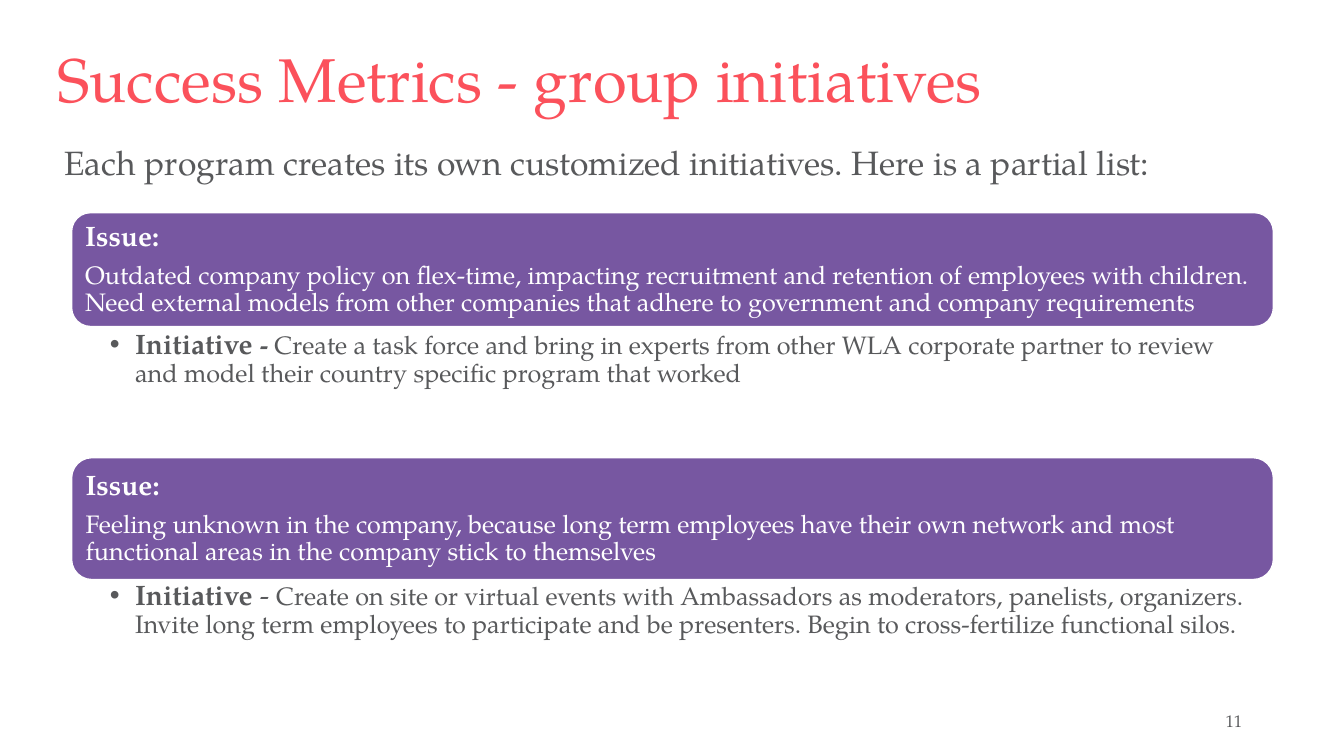
"""Build the slide on success metrics for group initiatives."""
from dataclasses import dataclass

from lxml.etree import SubElement
from pptx import Presentation
from pptx.dml.color import RGBColor
from pptx.enum.shapes import MSO_SHAPE as Shape
from pptx.enum.text import MSO_ANCHOR as Anchor, MSO_AUTO_SIZE as AutoSize, PP_ALIGN as Align
from pptx.oxml.ns import qn
from pptx.util import Inches, Pt


@dataclass(frozen=True)
class Theme:
    font: str = "TeX Gyre Pagella"
    coral: RGBColor = RGBColor(0xFB, 0x51, 0x5B)
    purple: RGBColor = RGBColor(0x77, 0x57, 0xA1)
    gray: RGBColor = RGBColor(0x58, 0x59, 0x5B)
    white: RGBColor = RGBColor(0xFF, 0xFF, 0xFF)
    title: int = 44
    intro: int = 24
    label: int = 20
    body: int = 18
    number: int = 12


@dataclass(frozen=True)
class Box:
    left: float
    top: float
    width: float
    height: float


@dataclass(frozen=True)
class Span:
    text: str
    size: int
    color: RGBColor
    bold: bool = False


@dataclass(frozen=True)
class Topic:
    issue: str
    initiative: tuple[Span, ...]
    issue_top: float
    issue_height: float
    initiative_top: float
    initiative_height: float


THEME = Theme()
LEFT, WIDTH = 0.71, 11.92
INITIATIVE = Span("Initiative ", THEME.label, THEME.gray, True)
TOPICS = (
    Topic(
        "Outdated company policy on flex-time, impacting recruitment and retention of employees "
        "with children. Need external models from other companies that adhere to government and "
        "company requirements",
        (
            INITIATIVE,
            Span("-", THEME.body, THEME.gray, True),
            Span(" Create a task force and bring in experts from other WLA corporate partner to "
                 "review and model their country specific program that worked",
                 THEME.body, THEME.gray),
        ),
        2.11, 1.13, 3.25, 1.28,
    ),
    Topic(
        "Feeling unknown in the company, because long term employees have their own network and "
        "most functional areas in the company stick to themselves",
        (
            INITIATIVE,
            Span("- ", THEME.label, THEME.gray),
            Span("Create on site or virtual events with Ambassadors as moderators, panelists, "
                 "organizers. Invite long term employees to participate and be presenters. Begin "
                 "to cross-fertilize functional silos.", THEME.body, THEME.gray),
        ),
        4.54, 1.21, 5.74, 0.62,
    ),
)


def place(shape, box: Box) -> None:
    """Move and size a shape."""
    shape.left, shape.top = Inches(box.left), Inches(box.top)
    shape.width, shape.height = Inches(box.width), Inches(box.height)


def set_frame(frame, anchor: Anchor, left: float = 0.1, top: float = 0.05, right: float = 0.1) -> None:
    """Set wrapping, anchor and insets of a text frame."""
    frame.word_wrap = True
    frame.auto_size = AutoSize.NONE
    frame.vertical_anchor = anchor
    frame.margin_left, frame.margin_right = Inches(left), Inches(right)
    frame.margin_top = frame.margin_bottom = Inches(top)


def write(para, spans: tuple[Span, ...], align: Align = Align.LEFT,
          line: float = 1.0, after: float = 0) -> None:
    """Fill a paragraph with formatted runs."""
    para.alignment, para.line_spacing = align, line
    para.space_before, para.space_after = Pt(0), Pt(after)
    for span in spans:
        run = para.add_run()
        run.text = span.text
        run.font.name, run.font.size = THEME.font, Pt(span.size)
        run.font.bold, run.font.color.rgb = span.bold, span.color


def add_bullet(para, indent: float) -> None:
    """Give a paragraph a round bullet with a hanging indent."""
    properties = para._p.get_or_add_pPr()
    properties.set("marL", str(Inches(indent)))
    properties.set("indent", str(-Inches(indent)))
    SubElement(properties, qn("a:buChar"), char="•")


def add_text(slide, box: Box, span: Span, anchor: Anchor, align: Align = Align.LEFT) -> None:
    """Add a text box with one line."""
    shape = slide.shapes.add_textbox(0, 0, 0, 0)
    place(shape, box)
    set_frame(shape.text_frame, anchor)
    write(shape.text_frame.paragraphs[0], (span,), align)


def add_topic(slide, topic: Topic, initiative) -> None:
    """Draw an issue panel and fill the initiative list below it."""
    panel = slide.shapes.add_shape(Shape.ROUNDED_RECTANGLE, 0, 0, 0, 0)
    place(panel, Box(LEFT, topic.issue_top, WIDTH, topic.issue_height))
    panel.shadow.inherit = False
    panel.fill.solid()
    panel.fill.fore_color.rgb = THEME.purple
    panel.line.color.rgb, panel.line.width = THEME.white, Pt(1)
    frame = panel.text_frame
    set_frame(frame, Anchor.MIDDLE, 0.08, 0.08, 0.08)
    write(frame.paragraphs[0], (Span("Issue:", THEME.label, THEME.white, True),), line=0.9, after=7)
    write(frame.add_paragraph(), (Span(topic.issue, THEME.body, THEME.white),), line=0.9, after=6)

    place(initiative, Box(LEFT, topic.initiative_top, WIDTH, topic.initiative_height))
    set_frame(initiative.text_frame, Anchor.TOP, 0.38, 0.03, 0.16)
    para = initiative.text_frame.paragraphs[0]
    write(para, topic.initiative, line=0.9, after=4)
    add_bullet(para, 0.25)


def main() -> None:
    """Build and save the deck."""
    deck = Presentation()
    deck.slide_width, deck.slide_height = Inches(13.33), Inches(7.5)
    slide = deck.slides.add_slide(deck.slide_layouts.get_by_name("Two Content"))
    title, *initiatives = slide.placeholders
    place(title, Box(0.47, 0.02, 12.4, 1.59))
    set_frame(title.text_frame, Anchor.MIDDLE)
    heading = Span("Success Metrics - group initiatives", THEME.title, THEME.coral)
    write(title.text_frame.paragraphs[0], (heading,), line=0.9)
    intro = "Each program creates its own customized initiatives. Here is a partial list:"
    add_text(slide, Box(0.54, 1.36, 11.36, 0.5), Span(intro, THEME.intro, THEME.gray), Anchor.TOP)
    for topic, initiative in zip(TOPICS, initiatives):
        add_topic(slide, topic, initiative)
    add_text(slide, Box(9.42, 6.95, 3, 0.4), Span("11", THEME.number, THEME.gray),
             Anchor.MIDDLE, Align.RIGHT)
    deck.save("out.pptx")


if __name__ == "__main__":
    main()
